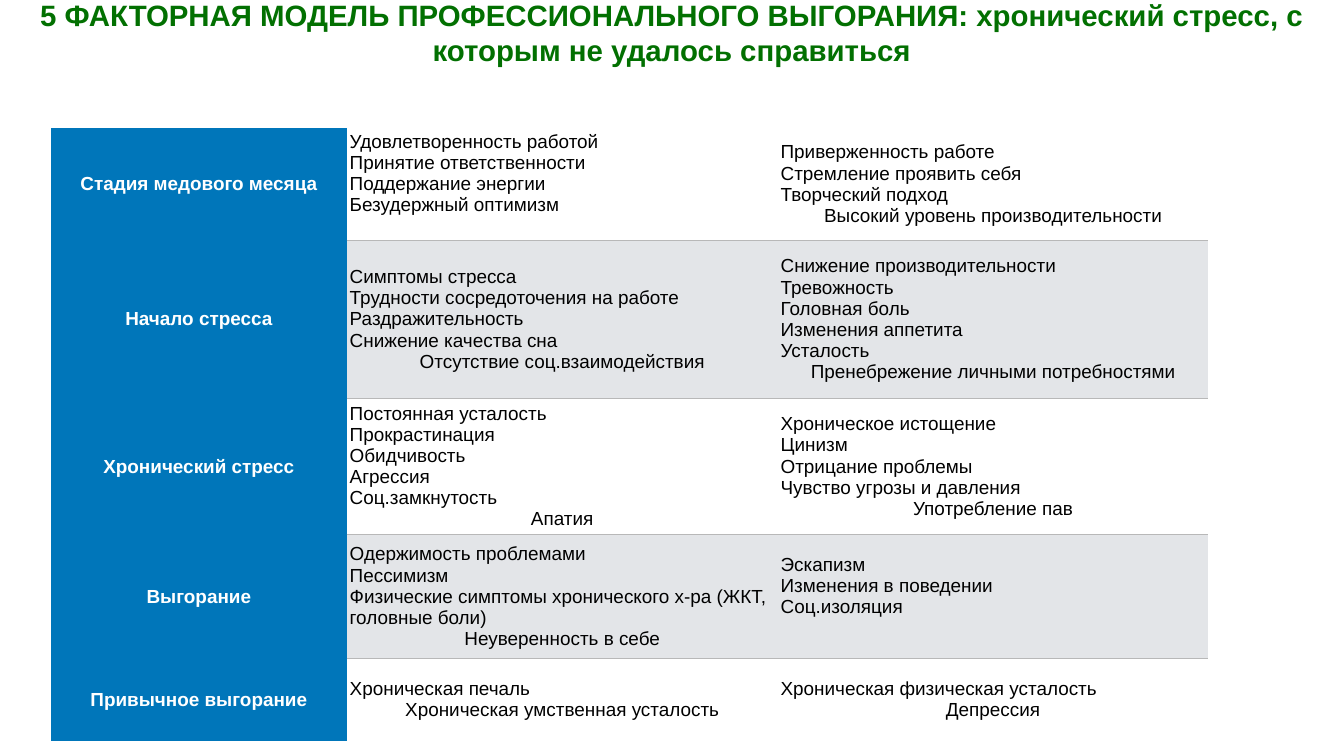
import pptx
import pptx.dml.color
import pptx.enum.text
import pptx.oxml.ns
import pptx.util
from lxml import etree

GREEN, BLUE, GREY, LINE = "027001", "0076BA", "E3E5E8", "B8B8B8"
WHITE, BLACK = "FFFFFF", "000000"
TITLE = ("5 ФАКТОРНАЯ МОДЕЛЬ ПРОФЕССИОНАЛЬНОГО ВЫГОРАНИЯ: "
         "хронический стресс, с которым не удалось справиться")
COLS = [22.01, 32.06, 32.06]
ROWS = [14.8, 20.87, 18.07, 16.4, 10.87]
STAGES = [
    ["Cтадия медового месяца",
     "Удовлетворенность работой\nПринятие ответственности\nПоддержание энергии\n"
     "Безудержный оптимизм\n",
     "Приверженность работе\nСтремление проявить себя\nТворческий подход\n"
     "Высокий уровень производительности"],
    ["Начало стресса",
     "Симптомы стресса\nТрудности сосредоточения на работе\nРаздражительность\n"
     "Снижение качества сна\nОтсутствие соц.взаимодействия",
     "Снижение производительности\nТревожность\nГоловная боль\nИзменения аппетита\n"
     "Усталость\nПренебрежение личными потребностями"],
    ["Хронический стресс",
     "Постоянная усталость\nПрокрастинация\nОбидчивость\nАгрессия\n"
     "Соц.замкнутость\nАпатия",
     "Хроническое истощение\nЦинизм\nОтрицание проблемы\n"
     "Чувство угрозы и давления\nУпотребление пав"],
    ["Выгорание",
     "Одержимость проблемами\nПессимизм\n"
     "Физические симптомы хронического х-ра (ЖКТ, головные боли)\n"
     "Неуверенность в себе",
     "Эскапизм\nИзменения в поведении\nСоц.изоляция\n"],
    ["Привычное выгорание",
     "Хроническая печаль\nХроническая умственная усталость",
     "Хроническая физическая усталость\nДепрессия"],
]


def tint(code):
    """Turn a hex string into a colour."""
    return pptx.dml.color.RGBColor.from_string(code)


class Deck:
    """Hold the style and the current slide; lengths are percents of its size."""

    font = "Arial"
    pad = pptx.util.Inches(0.06)
    leap = pptx.util.Inches(0.43)

    def __init__(self, wide, high):
        """Start a deck with one title-only slide."""
        self.file = pptx.Presentation()
        self.file.slide_width = pptx.util.Inches(wide)
        self.file.slide_height = pptx.util.Inches(high)
        self.slide = self.file.slides.add_slide(self.file.slide_layouts[5])

    def wide(self, part):
        """Give a percent of the slide's width."""
        return round(self.file.slide_width * part / 100)

    def high(self, part):
        """Give a percent of the slide's height."""
        return round(self.file.slide_height * part / 100)

    def box(self, left, top, width, height):
        """Give a frame in slide units."""
        return self.wide(left), self.high(top), self.wide(width), self.high(height)

    def style(self, para, size, hue, bold, align="CENTER"):
        """Format a paragraph and its runs."""
        para.alignment = getattr(pptx.enum.text.PP_ALIGN, align)
        for run in para.runs:
            run.font.name = self.font
            run.font.size = pptx.util.Pt(size)
            run.font.bold = bold
            run.font.color.rgb = tint(hue)

    def inset(self, item):
        """Set equal margins and a middle anchor on a cell or text frame."""
        item.margin_left = item.margin_right = self.pad
        item.margin_top = item.margin_bottom = self.pad
        item.vertical_anchor = pptx.enum.text.MSO_ANCHOR.MIDDLE

    def title(self, text, *frame):
        """Place and format the title placeholder."""
        head = self.slide.shapes.title
        head.left, head.top, head.width, head.height = self.box(*frame)
        body = head.text_frame
        body.text = text
        body.word_wrap = True
        body.auto_size = pptx.enum.text.MSO_AUTO_SIZE.NONE
        self.inset(body)
        self.style(body.paragraphs[0], 42, GREEN, True)

    def edge(self, cell, drawn):
        """Draw the named sides of a cell and clear the others."""
        props = cell._tc.get_or_add_tcPr()
        for spot, side in enumerate("LRTB"):
            line = etree.Element(pptx.oxml.ns.qn("a:ln" + side), w="12700")
            if side in drawn:
                fill = etree.SubElement(line, pptx.oxml.ns.qn("a:solidFill"))
                etree.SubElement(fill, pptx.oxml.ns.qn("a:srgbClr"), val=LINE)
            else:
                etree.SubElement(line, pptx.oxml.ns.qn("a:noFill"))
            props.insert(spot, line)

    def cell(self, cell, text, fill, label):
        """Fill a cell; all lines of a list but the last sit left."""
        cell.fill.solid()
        cell.fill.fore_color.rgb = tint(fill)
        self.inset(cell)
        cell.text_frame.text = text.strip()
        open_end = text.endswith("\n")
        if open_end:
            cell.margin_bottom = self.pad + self.leap
        paras = cell.text_frame.paragraphs
        for spot, para in enumerate(paras, 1):
            last = spot == len(paras) and not open_end
            self.style(para, 27, WHITE if label else BLACK, label,
                       "CENTER" if last else "LEFT")

    def table(self, data, cols, rows, left, top):
        """Add the table of stages and their signs."""
        frame = self.box(left, top, sum(cols), sum(rows))
        grid = self.slide.shapes.add_table(len(rows), len(cols), *frame).table
        grid.first_row = grid.horz_banding = False
        for col, part in zip(grid.columns, cols):
            col.width = self.wide(part)
        for r, (row, part) in enumerate(zip(grid.rows, rows)):
            row.height = self.high(part)
            sides = ("T" if r else "") + ("B" if r < len(rows) - 1 else "")
            for c, cell in enumerate(row.cells):
                label = c == 0
                fill = BLUE if label else (WHITE, GREY)[r % 2]
                self.cell(cell, data[r][c], fill, label)
                self.edge(cell, "" if label else sides)


def main():
    """Build and save the slide."""
    deck = Deck(26.67, 15)
    deck.table(STAGES, COLS, ROWS, 3.79, 16.93)
    deck.title(TITLE, 1.8, -0.8, 96.36, 10.07)
    deck.file.save("out.pptx")


if __name__ == "__main__":
    main()
